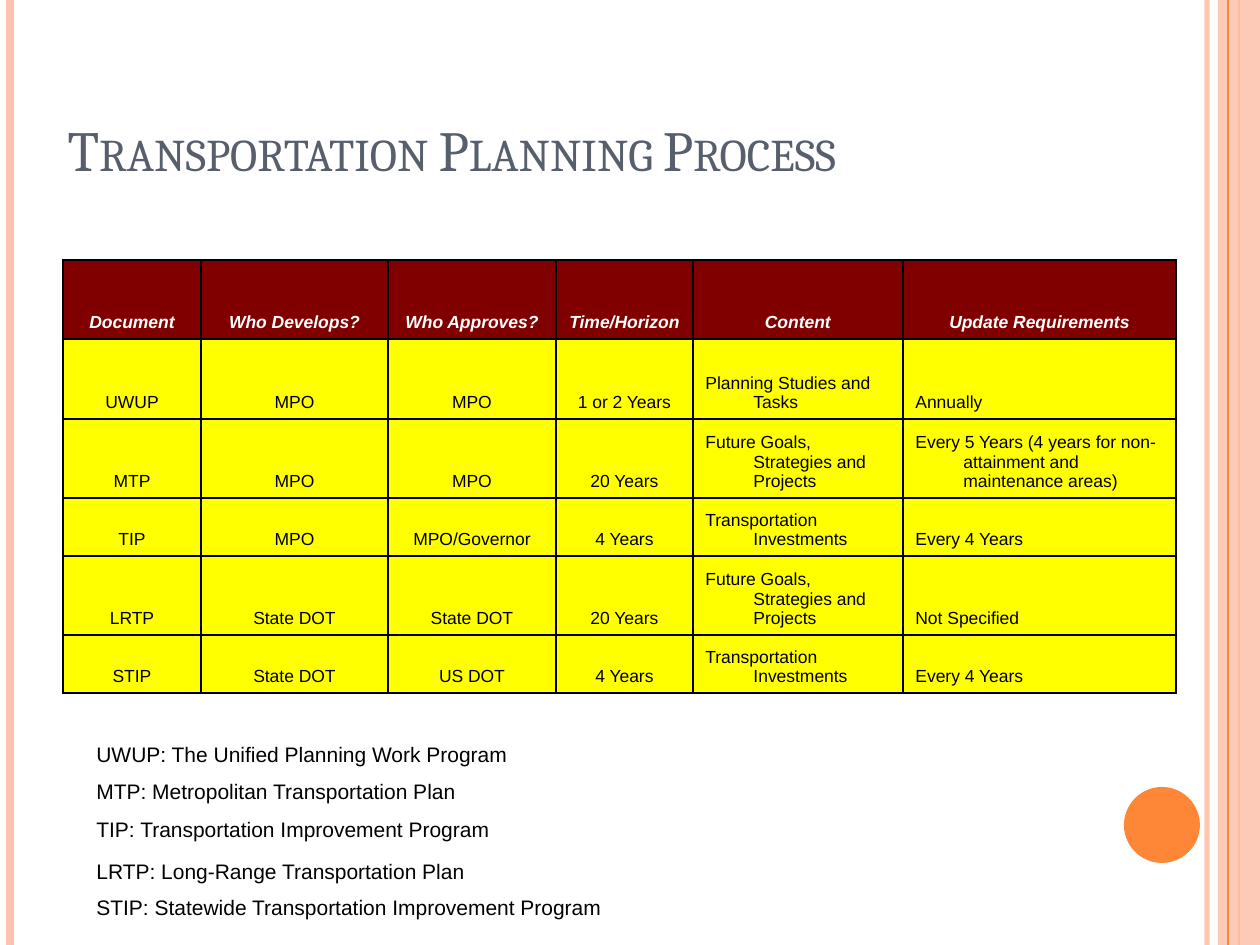
from pptx import Presentation
from pptx import util as u
from pptx.dml.color import RGBColor
from pptx.enum import shapes, text
from pptx.oxml import xmlchemy
from pptx.oxml import ns
from lxml import etree

HEADINGS = ["Document", "Who Develops?", "Who Approves?", "Time/Horizon",
            "Content", "Update Requirements"]
GOALS = "Future Goals, Strategies and Projects"
INVESTMENTS = "Transportation Investments"
PLANS = [
    ["UWUP", "MPO", "MPO", "1 or 2 Years", "Planning Studies and Tasks", "Annually"],
    ["MTP", "MPO", "MPO", "20 Years", GOALS,
     "Every 5 Years (4 years for non-attainment and maintenance areas)"],
    ["TIP", "MPO", "MPO/Governor", "4 Years", INVESTMENTS, "Every 4 Years"],
    ["LRTP", "State DOT", "State DOT", "20 Years", GOALS, "Not Specified"],
    ["STIP", "State DOT", "US DOT", "4 Years", INVESTMENTS, "Every 4 Years"],
]
COLUMN_WIDTHS = [138, 187, 168, 137, 210, 273]
ROW_HEIGHTS = [79, 80, 79, 58, 79, 58]
ACRONYMS = [
    "UWUP: The Unified Planning Work Program",
    "MTP: Metropolitan Transportation Plan",
    "TIP: Transportation Improvement Program",
    "LRTP: Long-Range Transportation Plan\vSTIP: Statewide Transportation Improvement Program",
]


def px(length):
    return u.Emu(round(length * 914400 / 126))


def place(box):
    return [px(length) for length in box]


def color(hex_code):
    return RGBColor.from_string(hex_code)


def child(parent, tag, **attributes):
    return etree.SubElement(parent, ns.qn(tag), **attributes)


def set_opacity(shape, percent):
    fill = shape._element.spPr.find(".//" + ns.qn("a:srgbClr"))
    child(fill, "a:alpha", val=str(percent * 1000))


def style(font, size, hex_code, name="Arial"):
    font.size = u.Pt(size)
    font.name = name
    font.color.rgb = color(hex_code)


def add_stripe(page, x, height, hex_code, width):
    stripe = page.shapes.add_connector(
        shapes.MSO_CONNECTOR.STRAIGHT, px(x), 0, px(x), px(height))
    stripe.line.color.rgb = color(hex_code)
    stripe.line.width = u.Pt(width)
    child(stripe._element.spPr, "a:effectLst")
    return stripe


def add_block(page, kind, box, hex_code):
    block = page.shapes.add_shape(kind, *place(box))
    block.shadow.inherit = False
    block.fill.solid()
    block.fill.fore_color.rgb = color(hex_code)
    block.line.fill.background()
    return block


def add_frame(page, box):
    left, top, width, height = box
    right = left + width
    set_opacity(add_stripe(page, right - 53, height, "FEC3AE", 3), 93)
    add_stripe(page, left + 10, height, "FEC3AE", 4.5)
    add_stripe(page, right - 21, height, "FE8637", 1.5)
    band = add_block(page, shapes.MSO_SHAPE.RECTANGLE,
                     (right - 42, top, 42, height), "FEC3AE")
    set_opacity(band, 87)
    add_stripe(page, right - 32, height, "FE8637", 0.75)
    add_block(page, shapes.MSO_SHAPE.OVAL,
              (right - 136, top + height - 158, 76, 76), "FE8637")


def add_title(page, box, wording):
    title = page.shapes.title
    title.left, title.top, title.width, title.height = place(box)
    frame = title.text_frame
    frame.text = wording
    frame.auto_size = text.MSO_AUTO_SIZE.NONE
    frame.vertical_anchor = text.MSO_ANCHOR.BOTTOM
    para = frame.paragraphs[0]
    para.alignment = text.PP_ALIGN.LEFT
    style(para.font, 32.4, "575F6D", "Cambria")
    para.runs[0]._r.get_or_add_rPr().set("cap", "small")


def add_borders(cell):
    properties = cell._tc.get_or_add_tcPr()
    for index, side in enumerate(("a:lnL", "a:lnR", "a:lnT", "a:lnB")):
        border = etree.Element(ns.qn(side), w=str(u.Pt(1)))
        child(child(border, "a:solidFill"), "a:srgbClr", val="000000")
        properties.insert(index, border)


def fill_cell(cell, wording, is_heading, is_centered):
    cell.text = wording
    cell.vertical_anchor = text.MSO_ANCHOR.BOTTOM
    cell.fill.solid()
    cell.fill.fore_color.rgb = color("800000" if is_heading else "FFFF00")
    add_borders(cell)
    para = cell.text_frame.paragraphs[0]
    para.alignment = text.PP_ALIGN.CENTER if is_centered else text.PP_ALIGN.LEFT
    indent = px(48)
    properties = para._p.get_or_add_pPr()
    properties.set("marL", str(indent))
    properties.set("indent", str(-indent))
    style(para.font, 10, "FFFFFF" if is_heading else "000000")
    para.font.bold = para.font.italic = is_heading


def add_plan_table(page, left, top):
    rows = [HEADINGS] + PLANS
    box = (left, top, sum(COLUMN_WIDTHS), sum(ROW_HEIGHTS))
    table = page.shapes.add_table(len(rows), len(HEADINGS), *place(box)).table
    for column, width in zip(table.columns, COLUMN_WIDTHS):
        column.width = px(width)
    for row, height in zip(table.rows, ROW_HEIGHTS):
        row.height = px(height)
    for r, wordings in enumerate(rows):
        for c, wording in enumerate(wordings):
            fill_cell(table.cell(r, c), wording, r == 0, r == 0 or c < 4)


def add_acronyms(page, box):
    frame = page.shapes.add_textbox(*place(box)).text_frame
    frame.word_wrap = True
    for index, wording in enumerate(ACRONYMS):
        para = frame.paragraphs[0] if index == 0 else frame.add_paragraph()
        para.text = wording
        para.space_before = u.Pt((0, 7, 7, 10)[index])
        style(para.font, 12, "000000")
    span = para.add_run()
    span.text = " "
    span.font.size = u.Pt(18)


def main():
    deck = Presentation()
    deck.slide_width, deck.slide_height = px(1260), px(945)
    page = deck.slides.add_slide(deck.slide_layouts[5])
    add_frame(page, (0, 0, 1260, 945))
    add_title(page, (55, 31, 1071, 158), "Transportation Planning Process")
    add_plan_table(page, 63, 260)
    add_acronyms(page, (84, 735, 1029, 189))
    deck.save("out.pptx")


if __name__ == "__main__":
    main()
